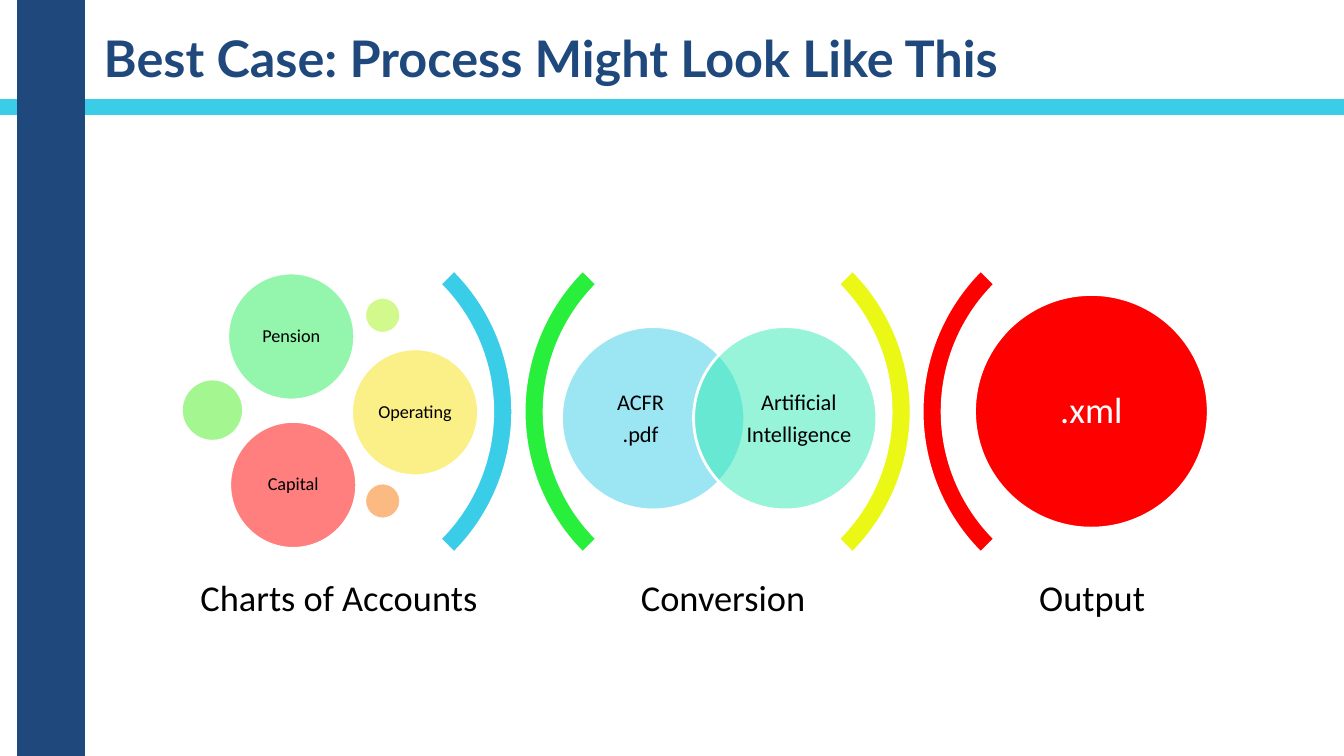
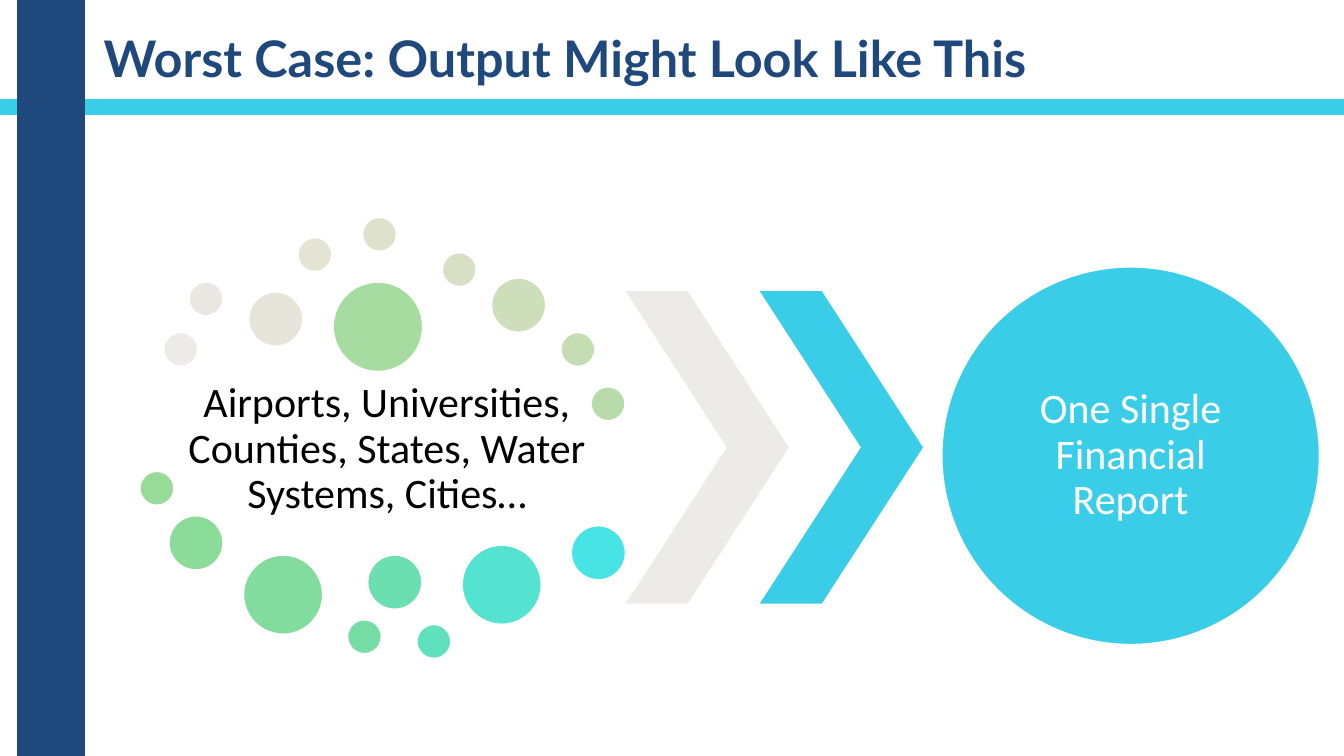
from dataclasses import dataclass
from typing import Optional

import lxml.etree
import pptx
import pptx.dml.color
import pptx.enum.shapes
import pptx.enum.text
import pptx.oxml.ns
import pptx.util

Cm = pptx.util.Cm
Pt = pptx.util.Pt
Shapes = pptx.enum.shapes.MSO_SHAPE
Align = pptx.enum.text.PP_ALIGN

# Shared look
NAVY, CYAN, RED = "1F497D", "3ACDE8", "FF0000"
WHITE, BLACK, STONE = "FFFFFF", "000000", "EDEBE8"
TITLE_FONT, BODY_FONT = "Lato", "Calibri"
SLIDE_WIDTH, SLIDE_HEIGHT = 33.87, 19.05
OUTLINE_WIDTH = 2
TITLE_ONLY = 5


@dataclass
class Circle:
    """Lengths in centimetres, text size in points."""
    left: float
    top: float
    diameter: float
    fill: str
    opacity: int = 100
    text: str = ""
    size: float = 13
    text_color: str = BLACK
    inset: float = 0.13


@dataclass
class Bracket:
    left: float
    rotation: int
    fill: str


@dataclass
class Label:
    left: float
    top: float
    width: float
    height: float
    text: str
    size: float
    inset: float


# Process: two brackets and a caption for each stage
OPENS_LEFT, OPENS_RIGHT = 90, 270
BRACKET_TOP, BRACKET_SIZE = 5.33, 10.08
BRACKETS = [
    Bracket(2.84, OPENS_LEFT, CYAN),
    Bracket(13.21, OPENS_RIGHT, "27EF3C"),
    Bracket(12.88, OPENS_LEFT, "EBF714"),
    Bracket(23.24, OPENS_RIGHT, RED),
]
STAGES = [(4.72, "Charts of Accounts"), (14.4, "Conversion"), (23.7, "Output")]
CAPTIONS = [Label(left, 14.1, 7.65, 2.01, text, 26, 0.28) for left, text in STAGES]
CONVERSION_LABELS = [
    Label(left, 8.79, 3.07, 3.53, text, 16, 0)
    for left, text in [(14.61, "ACFR\n.pdf"), (18.6, "Artificial\nIntelligence")]
]
PROCESS_CIRCLES = [
    Circle(14.15, 8.23, 4.62, CYAN, 50),
    Circle(17.48, 8.23, 4.62, "32EBB4", 50),
    Circle(5.74, 6.88, 3.2, "2AEE5C", 50, "Pension"),
    Circle(4.57, 9.55, 1.57, "4BF122", 50),
    Circle(9.19, 7.49, 0.91, "A7F41A", 50),
    Circle(8.86, 8.79, 3.2, "F8E111", 50, "Operating"),
    Circle(9.19, 12.17, 0.91, "FB7609", 50),
    Circle(5.79, 10.62, 3.2, RED, 50, "Capital"),
    Circle(24.56, 7.42, 5.89, RED, 100, ".xml", 26, WHITE, 0.28),
]

# Output: many sources flow into one report
SMALL, MEDIUM, LARGE, LARGEST = 0.89, 1.4, 2.03, 2.29
SOURCE_DOTS = [
    Circle(4.11, 8.36, SMALL, STONE),
    Circle(4.75, 7.09, SMALL, "EAE7E1"),
    Circle(6.25, 7.34, MEDIUM, "E7E5DB"),
    Circle(7.49, 5.97, SMALL, "E3E4D3"),
    Circle(9.12, 5.46, SMALL, "DEE2CC"),
    Circle(11.13, 6.35, SMALL, "D7E0C4"),
    Circle(12.37, 6.99, MEDIUM, "CEDEBB"),
    Circle(14.12, 8.36, SMALL, "C4DDB3"),
    Circle(14.88, 9.73, SMALL, "B7DCA9"),
    Circle(8.38, 7.09, LARGEST, "A7DCA0"),
    Circle(3.51, 11.86, SMALL, "96DB97"),
    Circle(4.24, 12.98, MEDIUM, "8CDC99"),
    Circle(6.12, 13.97, LARGE, "81DC9D"),
    Circle(8.74, 15.6, SMALL, "76DDA4"),
    Circle(9.25, 13.97, MEDIUM, "6BDFAF"),
    Circle(10.49, 15.72, SMALL, "5FE1BE"),
    Circle(11.63, 13.72, LARGE, "53E3D0"),
    Circle(14.38, 13.23, MEDIUM, "47E3E5"),
]
SOURCES = Label(4.14, 9.47, 11.23, 3.71,
                "Airports, Universities, Counties, States, Water Systems, Cities…", 30, 0.1)
CHEVRONS = [(15.77, STONE), (19.15, CYAN)]
REPORT = Circle(23.72, 6.71, 9.55, CYAN, 100, "One Single Financial Report", 30, WHITE, 0)


def rgb(color: str) -> pptx.dml.color.RGBColor:
    return pptx.dml.color.RGBColor.from_string(color)


def write_text(frame, text: str, *, size: float, color: str = BLACK, font: str = BODY_FONT,
               bold: bool = False, align=Align.CENTER, inset: Optional[float] = None,
               line_spacing: float = 0.9, after: float = 0.35) -> None:
    """Fill a text frame, one paragraph a line; after is a share of the text size."""
    frame.word_wrap = True
    frame.auto_size = pptx.enum.text.MSO_AUTO_SIZE.NONE
    frame.vertical_anchor = pptx.enum.text.MSO_ANCHOR.MIDDLE
    if inset is not None:
        frame.margin_left = frame.margin_right = Cm(inset)
        frame.margin_top = frame.margin_bottom = Cm(inset)
    frame.text = text
    for paragraph in frame.paragraphs:
        paragraph.alignment = align
        paragraph.line_spacing = line_spacing
        paragraph.space_after = Pt(after * size)
        paragraph.font.name = font
        paragraph.font.size = Pt(size)
        paragraph.font.bold = bold
        paragraph.font.color.rgb = rgb(color)


def add_preset(slide, preset, left: float, top: float, width: float, height: float, *,
               fill: str, line: Optional[str] = WHITE, opacity: int = 100):
    shape = slide.shapes.add_shape(preset, Cm(left), Cm(top), Cm(width), Cm(height))
    shape.shadow.inherit = False
    shape.fill.solid()
    shape.fill.fore_color.rgb = rgb(fill)
    if opacity < 100:
        fill_color = shape.element.spPr.find("./" + pptx.oxml.ns.qn("a:solidFill"))[0]
        alpha = lxml.etree.SubElement(fill_color, pptx.oxml.ns.qn("a:alpha"))
        alpha.set("val", str(opacity * 1000))
    if line is None:
        shape.line.fill.background()
    else:
        shape.line.color.rgb = rgb(line)
        shape.line.width = Pt(OUTLINE_WIDTH)
    return shape


def add_circle(slide, circle: Circle) -> None:
    shape = add_preset(slide, Shapes.OVAL, circle.left, circle.top, circle.diameter,
                       circle.diameter, fill=circle.fill, opacity=circle.opacity)
    if circle.text:
        write_text(shape.text_frame, circle.text, size=circle.size,
                   color=circle.text_color, inset=circle.inset)


def add_bracket(slide, bracket: Bracket) -> None:
    arc = add_preset(slide, Shapes.BLOCK_ARC, bracket.left, BRACKET_TOP,
                     BRACKET_SIZE, BRACKET_SIZE, fill=bracket.fill)
    for index, value in enumerate((135, 189, 0.05)):
        arc.adjustments[index] = value
    arc.rotation = bracket.rotation


def add_label(slide, label: Label) -> None:
    box = slide.shapes.add_textbox(Cm(label.left), Cm(label.top),
                                   Cm(label.width), Cm(label.height))
    write_text(box.text_frame, label.text, size=label.size, inset=label.inset)


def add_titled_slide(deck, title: str):
    slide = deck.slides.add_slide(deck.slide_layouts[TITLE_ONLY])
    heading = slide.shapes.title
    heading.left, heading.top = Cm(2.36), Cm(0.28)
    heading.width, heading.height = Cm(31.12), Cm(2.34)
    write_text(heading.text_frame, title, size=36, color=NAVY, font=TITLE_FONT, bold=True,
               align=Align.LEFT, line_spacing=1.0, after=0)
    return slide


def move_bands_to_layout(slide) -> None:
    """Draw the two bands and hand them to the layout, behind its placeholders."""
    bands = [(0, 2.54, SLIDE_WIDTH, 0.33, CYAN), (0.46, 0, 1.65, SLIDE_HEIGHT, NAVY)]
    layout_tree = slide.slide_layout.shapes.element
    for index, (left, top, width, height, color) in enumerate(bands):
        band = add_preset(slide, Shapes.RECTANGLE, left, top, width, height,
                          fill=color, line=color)
        band.element.nvSpPr.cNvPr.set("id", str(100 + index))
        layout_tree.insert(2 + index, band.element)


def build_process(slide) -> None:
    for bracket in BRACKETS:
        add_bracket(slide, bracket)
    for circle in PROCESS_CIRCLES:
        add_circle(slide, circle)
    for label in CAPTIONS + CONVERSION_LABELS:
        add_label(slide, label)


def build_output(slide) -> None:
    add_label(slide, SOURCES)
    for dot in SOURCE_DOTS:
        add_circle(slide, dot)
    for left, color in CHEVRONS:
        chevron = add_preset(slide, Shapes.CHEVRON, left, 7.34, 4.11, 7.87,
                             fill=color, line=None)
        chevron.adjustments[0] = 0.62
    add_circle(slide, REPORT)


def main() -> None:
    deck = pptx.Presentation()
    deck.slide_width, deck.slide_height = Cm(SLIDE_WIDTH), Cm(SLIDE_HEIGHT)
    process = add_titled_slide(deck, "Best Case: Process Might Look Like This")
    move_bands_to_layout(process)
    build_process(process)
    build_output(add_titled_slide(deck, "Worst Case: Output Might Look Like This"))
    deck.save("out.pptx")


if __name__ == "__main__":
    main()
